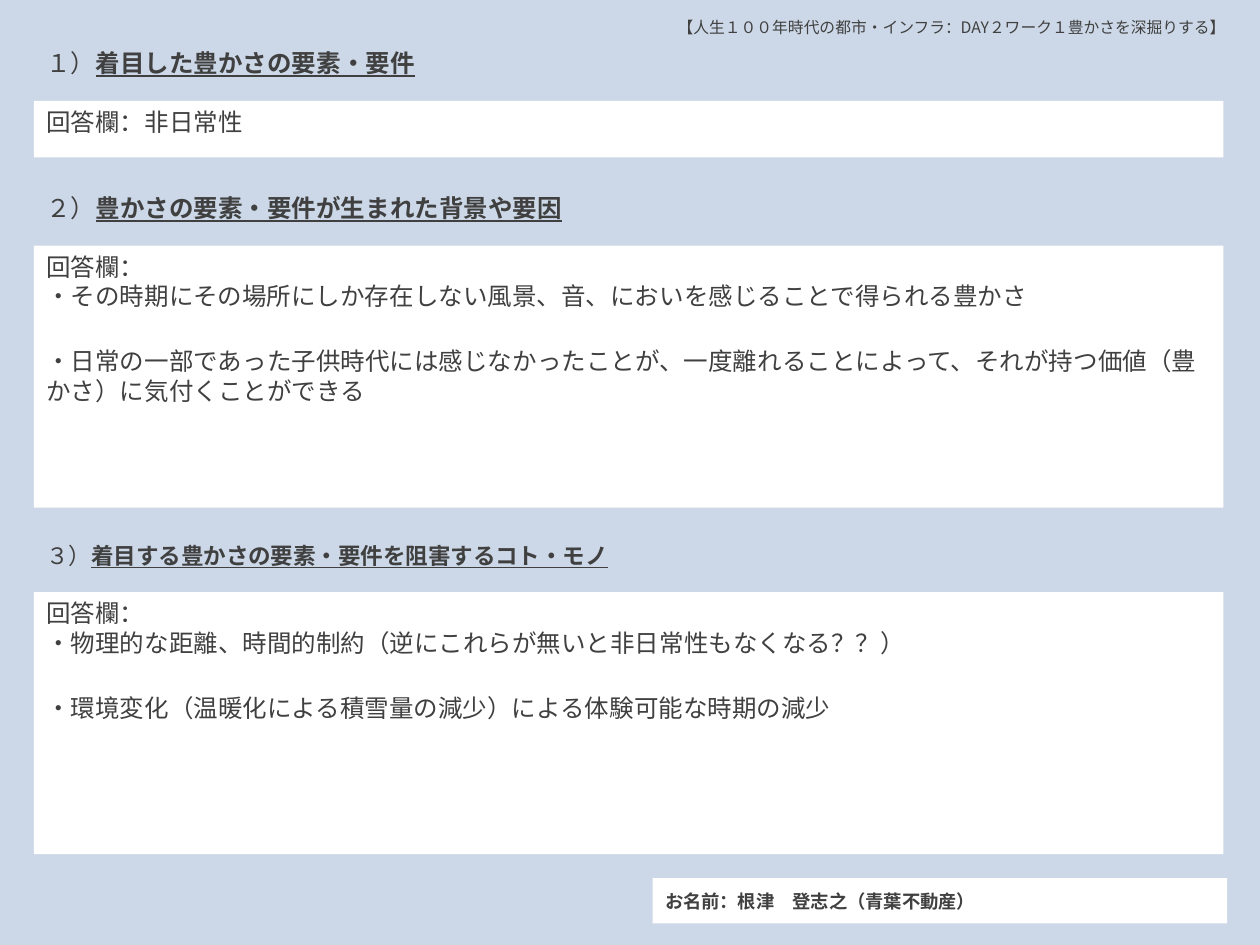
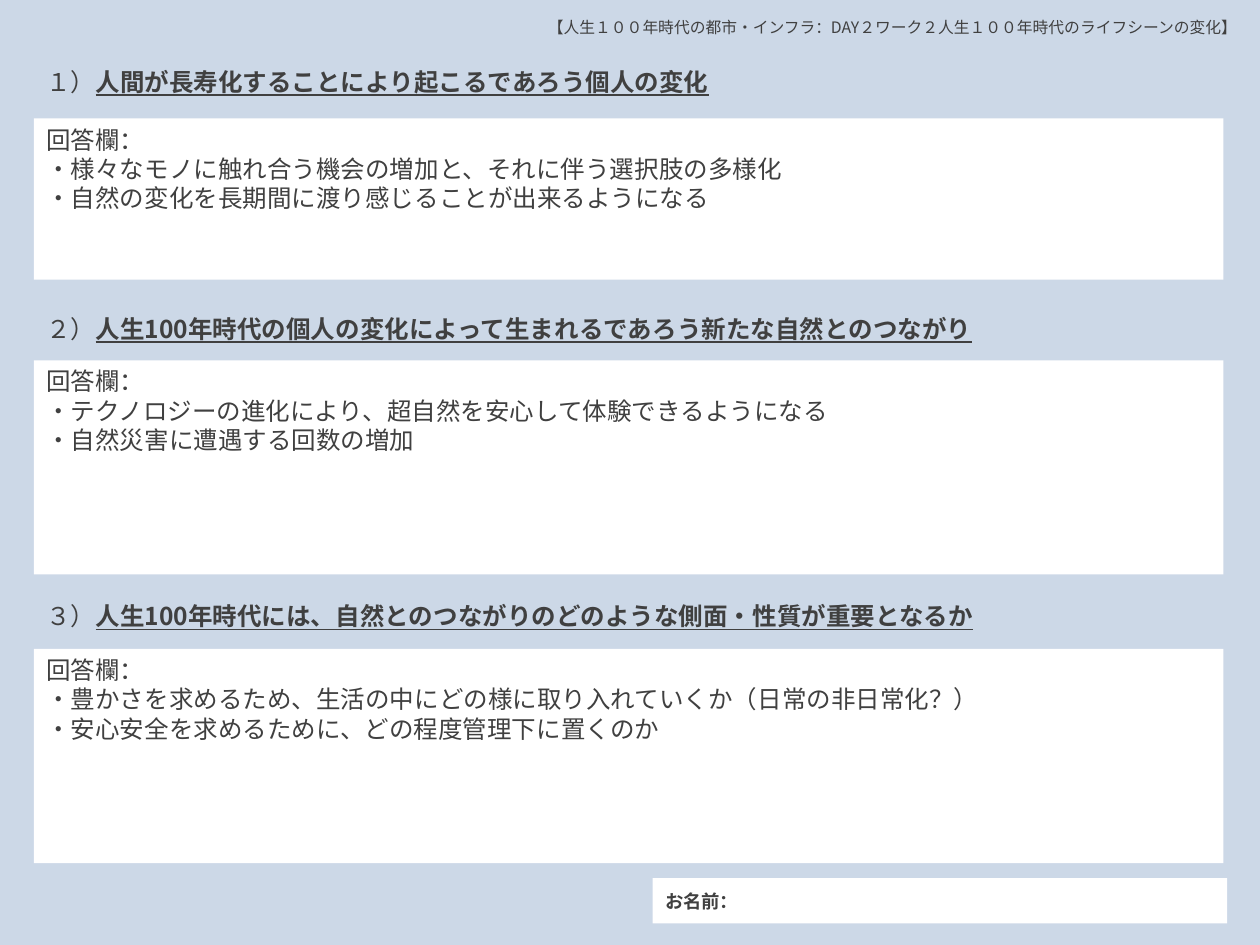
from dataclasses import dataclass

from lxml import etree
from pptx import Presentation
from pptx.dml.color import RGBColor
from pptx.enum import shapes, text
from pptx.oxml import ns
from pptx.util import Emu, Pt

PX = 9144  # EMU in one px, 100 px to the inch


@dataclass(frozen=True)
class Theme:
    font: str = "Noto Sans CJK JP"
    backdrop: str = "CCD8E7"
    panel: str = "FFFFFF"
    ink: str = "404040"
    body: float = 14
    small_heading: float = 12.9
    name: float = 10.5
    header: float = 9
    line_spacing: float = 1.0
    gap: float = 20.3  # height of one body line


LEFT, PANEL_WIDTH, HEADING_HEIGHT = 27, 944, 45
HEADER_TOP = 9
NAME_AREA = (518, 697, 456, 36)


class Worksheet:
    def __init__(self, deck, theme):
        self.deck, self.theme, self.page = deck, theme, None

    def start_page(self):
        self.page = self.deck.slides.add_slide(self.deck.slide_layouts[6])
        self.paint(self.page.background.fill, self.theme.backdrop)

    def paint(self, fill, color):
        fill.solid()
        fill.fore_color.rgb = RGBColor.from_string(color)

    def set_text(self, box, paragraphs, anchor=text.MSO_ANCHOR.TOP, gap_before=()):
        """Fill a box; each paragraph is a list of (words, font format) pairs."""
        frame = box.text_frame
        frame.word_wrap, frame.vertical_anchor = True, anchor
        for number, spans in enumerate(paragraphs):
            para = frame.add_paragraph() if number else frame.paragraphs[0]
            para.alignment = text.PP_ALIGN.LEFT
            para.line_spacing = self.theme.line_spacing
            para.space_before = Pt(self.theme.gap if number in gap_before else 0)
            for words, style in spans:
                span = para.add_run()
                span.text = words
                for key, value in {"name": self.theme.font, **style}.items():
                    setattr(span.font, key, value)
                span.font.color.rgb = RGBColor.from_string(self.theme.ink)
                east_asian = etree.SubElement(span.font._element, ns.qn("a:ea"))
                east_asian.set("typeface", self.theme.font)

    def label(self, area, spans):
        box = self.page.shapes.add_textbox(*(Emu(n * PX) for n in area))
        self.set_text(box, [spans])

    def panel(self, area, paragraphs, **layout):
        box = self.page.shapes.add_shape(
            shapes.MSO_SHAPE.RECTANGLE, *(Emu(n * PX) for n in area))
        box.shadow.inherit = False
        self.paint(box.fill, self.theme.panel)
        box.line.fill.background()
        self.set_text(box, paragraphs, **layout)

    def header(self, left, width, height, words):
        self.label((left, HEADER_TOP, width, height),
                   [(words, {"size": Pt(self.theme.header)})])

    def heading(self, top, width, number, words, size=None):
        size = Pt(size or self.theme.body)
        self.label((LEFT, top, width, HEADING_HEIGHT),
                   [(number, {"size": size}),
                    (words, {"size": size, "bold": True, "underline": True})])

    def answer(self, top, height, lines, gap_before=()):
        style = {"size": Pt(self.theme.body)}
        self.panel((LEFT, top, PANEL_WIDTH, height),
                   [[(line, style)] for line in lines], gap_before=gap_before)

    def name_field(self, words):
        style = {"size": Pt(self.theme.name), "bold": True}
        self.panel(NAME_AREA, [[(words, style)]], anchor=text.MSO_ANCHOR.MIDDLE)


def add_richness_page(sheet):
    sheet.start_page()
    sheet.header(528, 483, 30, "【人生１００年時代の都市・インフラ：DAY２ワーク１豊かさを深掘りする】")
    sheet.heading(33, 321, "１）", "着目した豊かさの要素・要件")
    sheet.answer(80, 45, ["回答欄：非日常性"])
    sheet.heading(148, 477, "２）", "豊かさの要素・要件が生まれた背景や要因")
    sheet.answer(195, 208, [
        "回答欄：",
        "・その時期にその場所にしか存在しない風景、音、においを感じることで得られる豊かさ",
        "・日常の一部であった子供時代には感じなかったことが、一度離れることによって、"
        "それが持つ価値（豊かさ）に気付くことができる",
    ], gap_before=[2])
    sheet.heading(425, 484, "３）", "着目する豊かさの要素・要件を阻害するコト・モノ",
                  sheet.theme.small_heading)
    sheet.answer(470, 208, [
        "回答欄：",
        "・物理的な距離、時間的制約（逆にこれらが無いと非日常性もなくなる？？）",
        "・環境変化（温暖化による積雪量の減少）による体験可能な時期の減少",
    ], gap_before=[2])
    sheet.name_field("お名前：根津　登志之（青葉不動産）")


def add_life_scene_page(sheet):
    sheet.start_page()
    sheet.header(425, 575, 36,
                 "【人生１００年時代の都市・インフラ：DAY２ワーク２人生１００年時代のライフシーンの変化】")
    sheet.heading(48, 560, "１）", "人間が長寿化することにより起こるであろう個人の変化")
    sheet.answer(94, 128, [
        "回答欄：",
        "・様々なモノに触れ合う機会の増加と、それに伴う選択肢の多様化",
        "・自然の変化を長期間に渡り感じることが出来るようになる",
    ])
    sheet.heading(244, 838, "２）",
                  "人生100年時代の個人の変化によって生まれるであろう新たな自然とのつながり")
    sheet.answer(286, 170, [
        "回答欄：",
        "・テクノロジーの進化により、超自然を安心して体験できるようになる",
        "・自然災害に遭遇する回数の増加",
    ])
    sheet.heading(472, 838, "３）",
                  "人生100年時代には、自然とのつながりのどのような側面・性質が重要となるか")
    sheet.answer(515, 170, [
        "回答欄：",
        "・豊かさを求めるため、生活の中にどの様に取り入れていくか（日常の非日常化？）",
        "・安心安全を求めるために、どの程度管理下に置くのか",
    ])
    sheet.name_field("お名前：")


def main():
    deck = Presentation()
    deck.slide_width, deck.slide_height = Emu(1000 * PX), Emu(750 * PX)
    sheet = Worksheet(deck, Theme())
    add_richness_page(sheet)
    add_life_scene_page(sheet)
    deck.save("out.pptx")


if __name__ == "__main__":
    main()
